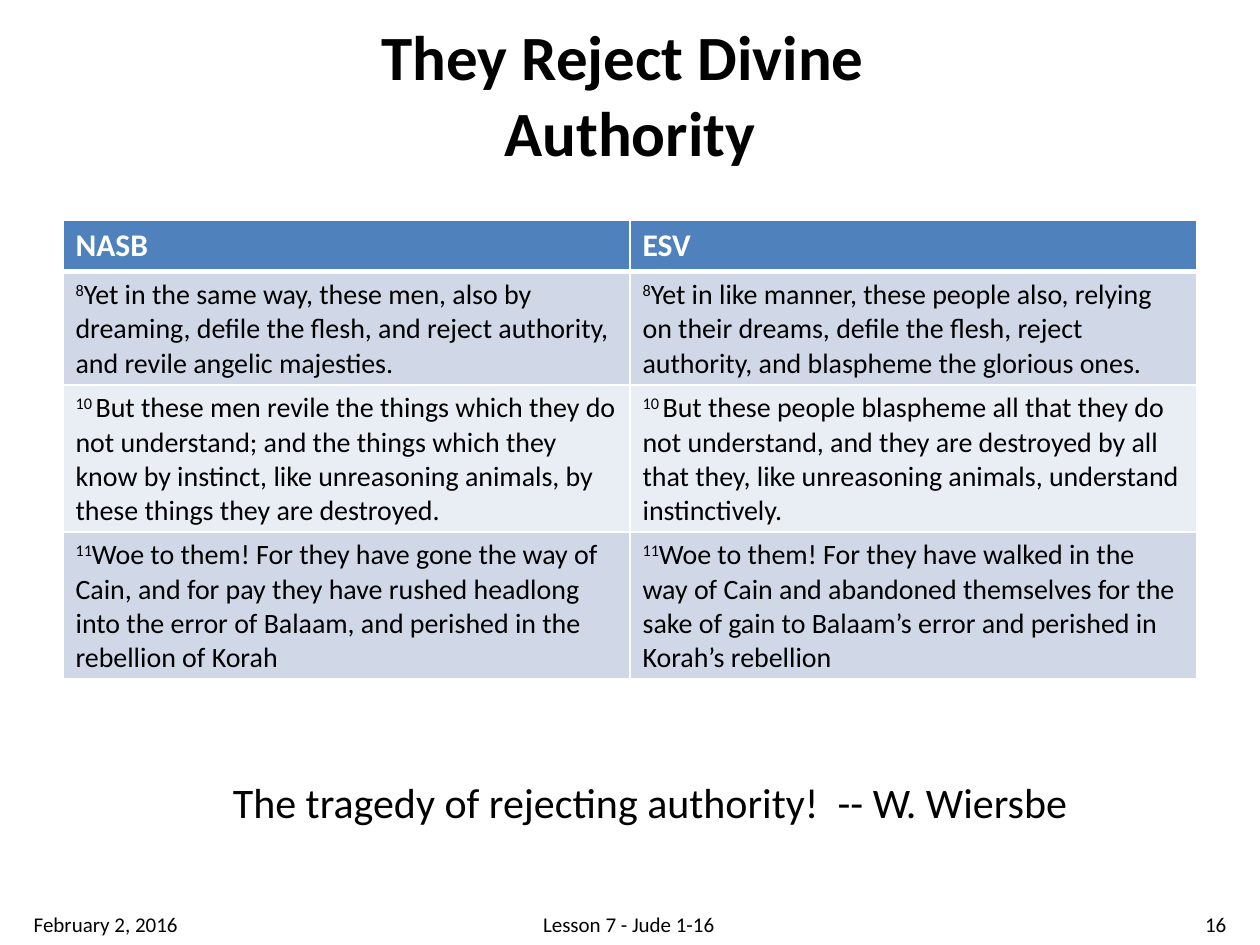
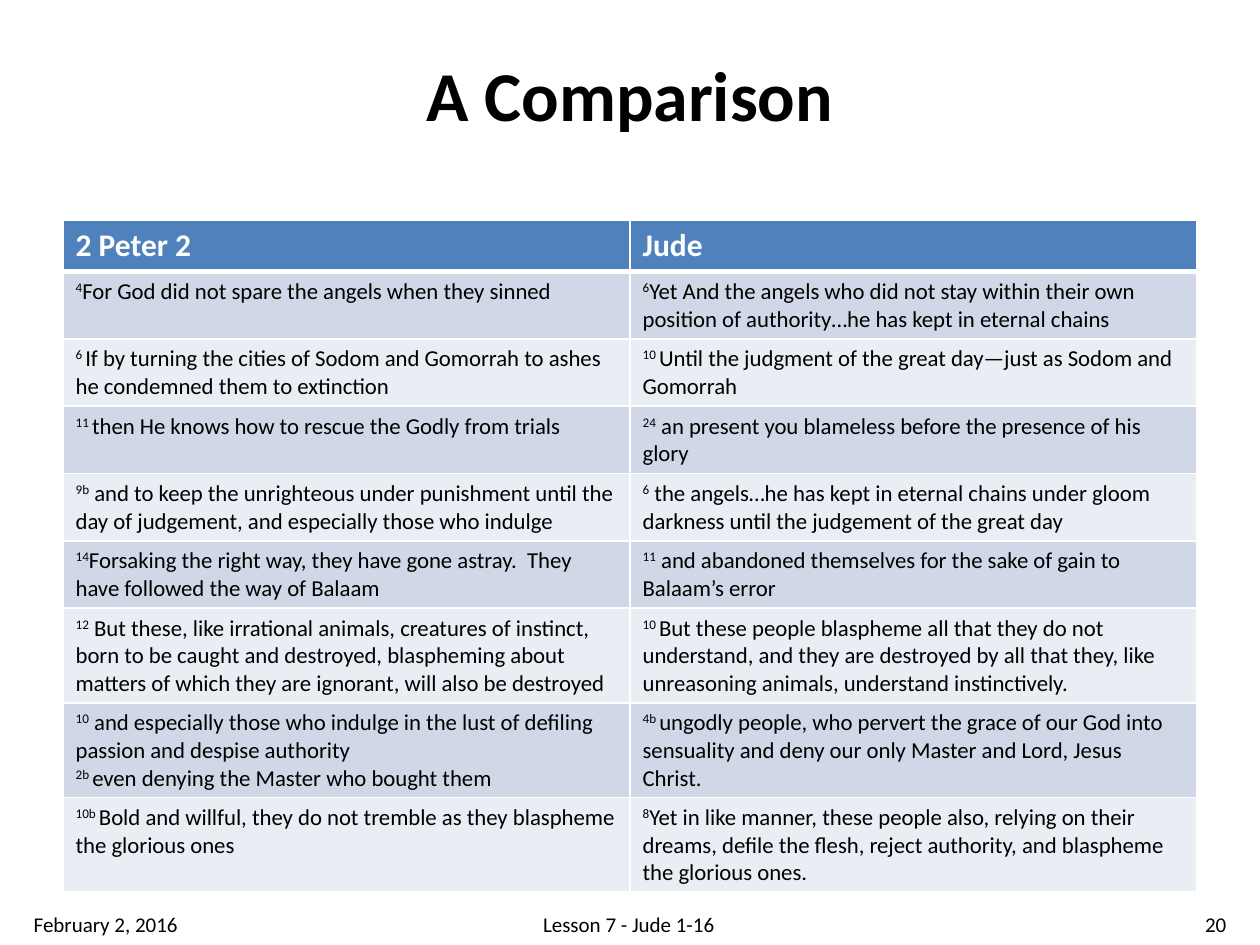
from pptx import Presentation
from pptx.dml.color import RGBColor
from pptx.enum.text import MSO_ANCHOR as Anchor, PP_ALIGN as Align
from pptx.oxml import parse_xml
from pptx.oxml.ns import nsdecls
from pptx.util import Pt

# Content: each cell is a list of (verse number, text) paragraphs
DATE = "February 2, 2016"
LESSON = "Lesson 7 - Jude 1-16"

SLIDES = [
    {
        "title": "They Reject Divine \vAuthority", "title_size": 36,
        "page": "16", "verse_size": 16, "table_height": 262,
        "header": ("NASB", "ESV"),
        "verses": [
            ([("8", "Yet in the same way, these men, also by dreaming, defile the flesh, "
                    "and reject authority,"),
              ("", "and revile angelic majesties.")],
             [("8", "Yet in like manner, these people also, relying on their dreams, defile "
                    "the flesh, reject authority, and blaspheme the glorious ones.")]),
            ([("10 ", "But these men revile the things which they do not understand; and the "
                      "things which they know by instinct, like unreasoning animals, by these "
                      "things they are destroyed.")],
             [("10 ", "But these people blaspheme all that they do not understand, and they "
                      "are destroyed by all that they, like unreasoning animals, understand "
                      "instinctively.")]),
            ([("11", "Woe to them! For they have gone the way of Cain, and for pay they have "
                     "rushed headlong into the error of Balaam, and perished in the rebellion "
                     "of Korah")],
             [("11", "Woe to them! For they have walked in the way of Cain and abandoned "
                     "themselves for the sake of gain to Balaam’s error and perished in "
                     "Korah’s rebellion")]),
        ],
        "closing": "The tragedy of rejecting authority!  -- W. Wiersbe",
    },
    {
        "title": "A Comparison", "title_size": 40,
        "page": "20", "verse_size": 13, "table_height": 383,
        "header": ("2 Peter 2", "Jude"),
        "verses": [
            ([("4", "For God did not spare the angels when they sinned")],
             [("6", "Yet And the angels who did not stay within their own position of "
                    "authority…he has kept in eternal chains")]),
            ([("6 ", "If by turning the cities of Sodom and Gomorrah to ashes he condemned "
                     "them to extinction")],
             [("10 ", "Until the judgment of the great day—just as Sodom and Gomorrah")]),
            ([("11 ", "then He knows how to rescue the Godly from trials")],
             [("24", " an present you blameless before the presence of his glory")]),
            ([("9b", " and to keep the unrighteous under punishment until the day of "
                     "judgement, and especially those who indulge")],
             [("6", " the angels…he has kept in eternal chains under gloom darkness until "
                    "the judgement of the great day")]),
            ([("14", "Forsaking the right way, they have gone astray.  They have followed "
                     "the way of Balaam")],
             [("11", " and abandoned themselves for the sake of gain to Balaam’s error")]),
            ([("12", " But these, like irrational animals, creatures of instinct, born to be "
                     "caught and destroyed, blaspheming about matters of which they are "
                     "ignorant, will also be destroyed")],
             [("10 ", "But these people blaspheme all that they do not understand, and they "
                      "are destroyed by all that they, like unreasoning animals, understand "
                      "instinctively.")]),
            ([("10", " and especially those who indulge in the lust of defiling passion and "
                     "despise authority"),
              ("2b ", "even denying the Master who bought them")],
             [("4b ", "ungodly people, who pervert the grace of our God into sensuality and "
                      "deny our only Master and Lord, Jesus Christ.")]),
            ([("10b ", "Bold and willful, they do not tremble as they blaspheme the glorious "
                       "ones")],
             [("8", "Yet in like manner, these people also, relying on their dreams, defile "
                    "the flesh, reject authority, and blaspheme the glorious ones.")]),
        ],
        "closing": None,
    },
]

# Shared style and places (points)
FONT = "Calibri"
BLACK, WHITE, HEADER_BLUE = "000000", "FFFFFF", "4F81BD"
BANDS = ("D0D8E8", "E9EDF4")
TITLE_BOX = (36, 8.3, 648, 90)
CLOSING_BOX = (126, 440, 496, 36)
TABLE_LEFT, TABLE_TOP, TABLE_WIDTH, ROW_HEIGHT = 36, 126, 648, 29.2
FOOTER_TOP, FOOTER_HEIGHT = 513.4, 28.8


def color(hex_code):
    return RGBColor.from_string(hex_code)


def style(paragraph, size, ink=BLACK, bold=False):
    font = paragraph.font
    font.name, font.size, font.bold = FONT, Pt(size), bold
    font.color.rgb = color(ink)


def add_text(slide, box, text, size, align=Align.LEFT, bold=False,
             anchor=Anchor.MIDDLE, wrap=True):
    frame = slide.shapes.add_textbox(*map(Pt, box)).text_frame
    frame.word_wrap = wrap
    frame.vertical_anchor = anchor
    paragraph = frame.paragraphs[0]
    paragraph.text = text
    paragraph.alignment = align
    style(paragraph, size, bold=bold)


def paint_cell(cell, fill, top=1, bottom=1):
    properties = cell._tc.get_or_add_tcPr()
    for side, width in (("L", 1), ("R", 1), ("T", top), ("B", bottom)):
        properties.append(parse_xml(
            f'<a:ln{side} {nsdecls("a")} w="{Pt(width)}"><a:solidFill>'
            f'<a:srgbClr val="{WHITE}"/></a:solidFill></a:ln{side}>'))
    cell.fill.solid()
    cell.fill.fore_color.rgb = color(fill)


def write_verses(cell, verses, size):
    frame = cell.text_frame
    for index, (number, text) in enumerate(verses):
        paragraph = frame.add_paragraph() if index else frame.paragraphs[0]
        if number:
            superscript = paragraph.add_run()
            superscript.text = number
            superscript._r.get_or_add_rPr().set("baseline", "30000")
        paragraph.add_run().text = text
        style(paragraph, size)


def add_verse_table(slide, content):
    rows = content["verses"]
    holder = slide.shapes.add_table(
        len(rows) + 1, 2, Pt(TABLE_LEFT), Pt(TABLE_TOP),
        Pt(TABLE_WIDTH), Pt(content["table_height"]))
    table = holder.table
    for row in table.rows:
        row.height = Pt(ROW_HEIGHT)
    holder.height = Pt(content["table_height"])

    # Header row, with a heavier rule below
    for column, name in enumerate(content["header"]):
        cell = table.cell(0, column)
        paint_cell(cell, HEADER_BLUE, bottom=3)
        cell.text = name
        style(cell.text_frame.paragraphs[0], 18, WHITE, bold=True)

    # Banded verse rows
    for index, pair in enumerate(rows):
        for column, verses in enumerate(pair):
            cell = table.cell(index + 1, column)
            paint_cell(cell, BANDS[index % 2], top=1 if index else 3)
            write_verses(cell, verses, content["verse_size"])


def add_footer(slide, page):
    for left, width, text, align in ((653.8, 54, page, Align.RIGHT),
                                     (12.2, 113.8, DATE, Align.LEFT),
                                     (164.2, 390.2, LESSON, Align.CENTER)):
        add_text(slide, (left, FOOTER_TOP, width, FOOTER_HEIGHT), text, 12, align)


def main():
    deck = Presentation()
    deck.slide_width, deck.slide_height = Pt(720), Pt(540)
    for content in SLIDES:
        slide = deck.slides.add_slide(deck.slide_layouts[6])
        add_text(slide, TITLE_BOX, content["title"], content["title_size"],
                 Align.CENTER, bold=True)
        add_verse_table(slide, content)
        if content["closing"]:
            add_text(slide, CLOSING_BOX, content["closing"], 24,
                     anchor=Anchor.TOP, wrap=False)
        add_footer(slide, content["page"])
    deck.save("out.pptx")


if __name__ == "__main__":
    main()
